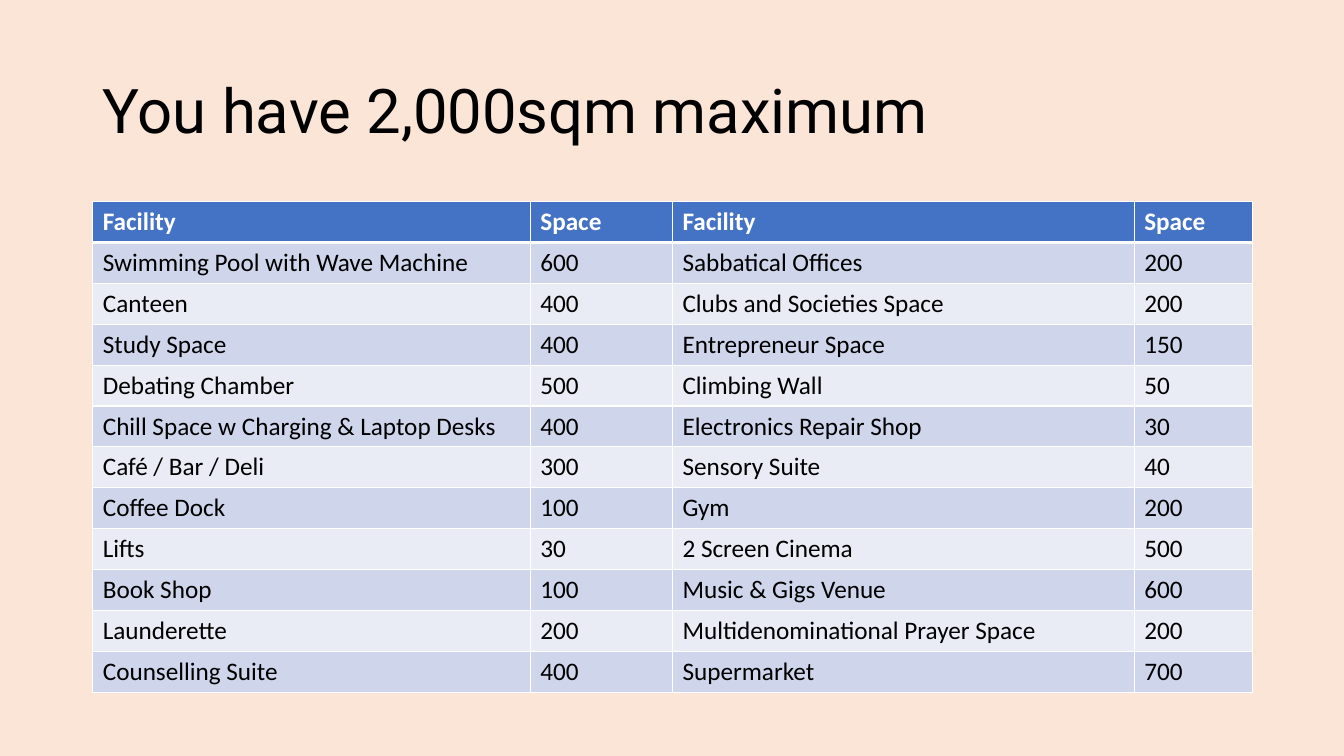
from lxml.etree import SubElement
from pptx import Presentation
from pptx.dml.color import RGBColor
from pptx.enum.text import MSO_ANCHOR
from pptx.oxml.ns import qn
from pptx.util import Inches, Pt

# Content
TITLE = "You have 2,000sqm maximum"
HEAD = ("Facility", "Space", "Facility", "Space")
ROWS = [
    ("Swimming Pool with Wave Machine", 600, "Sabbatical Offices", 200),
    ("Canteen", 400, "Clubs and Societies Space", 200),
    ("Study Space", 400, "Entrepreneur Space", 150),
    ("Debating Chamber", 500, "Climbing Wall", 50),
    ("Chill Space w Charging & Laptop Desks", 400, "Electronics Repair Shop", 30),
    ("Café / Bar / Deli", 300, "Sensory Suite", 40),
    ("Coffee Dock", 100, "Gym", 200),
    ("Lifts", 30, "2 Screen Cinema", 500),
    ("Book Shop", 100, "Music & Gigs Venue", 600),
    ("Launderette", 200, "Multidenominational Prayer Space", 200),
    ("Counselling Suite", 400, "Supermarket", 700),
]

# Colours and sizes
PEACH = RGBColor(0xFB, 0xE5, 0xD6)
BLUE = RGBColor(0x44, 0x72, 0xC4)
DARK = RGBColor(0xCF, 0xD5, 0xEA)
LIGHT = RGBColor(0xE9, 0xEB, 0xF5)
WHITE = RGBColor(0xFF, 0xFF, 0xFF)
BLACK = RGBColor(0, 0, 0)
LEFT, WIDTH = Inches(0.92), Inches(11.5)
COLS = (4.34, 1.41, 4.58, 1.17)


def write(frame, text, size=18, font="Calibri", color=BLACK, bold=False, space=None):
    para = frame.paragraphs[0]
    para.line_spacing = space
    run = para.add_run()
    run.text = text
    run.font.size = Pt(size)
    run.font.name = font
    run.font.color.rgb = color
    run.font.bold = bold


def edge(cell, base):
    props = cell._tc.get_or_add_tcPr()
    for side, width in (("L", 1), ("R", 1), ("T", 1), ("B", base)):
        line = SubElement(props, qn(f"a:ln{side}"), w=str(Pt(width)))
        fill = SubElement(line, qn("a:solidFill"))
        SubElement(fill, qn("a:srgbClr"), val=str(WHITE))


def main():
    deck = Presentation()
    deck.slide_width, deck.slide_height = Inches(13.33), Inches(7.5)
    slide = deck.slides.add_slide(deck.slide_layouts[6])
    slide.background.fill.solid()
    slide.background.fill.fore_color.rgb = PEACH

    # Title
    frame = slide.shapes.add_textbox(LEFT, Inches(0.4), WIDTH, Inches(1.45)).text_frame
    frame.word_wrap = True
    frame.vertical_anchor = MSO_ANCHOR.MIDDLE
    write(frame, TITLE, size=44, font="Roboto", space=0.9)

    # Table of facilities
    lines = [HEAD, *ROWS]
    table = slide.shapes.add_table(
        len(lines), len(COLS), LEFT, Inches(2), WIDTH, Inches(4.87)).table
    for col, width in zip(table.columns, COLS):
        col.width = Inches(width)
    for r, line in enumerate(lines):
        top = r == 0
        for c, value in enumerate(line):
            cell = table.cell(r, c)
            edge(cell, 3 if top else 1)
            cell.fill.solid()
            cell.fill.fore_color.rgb = BLUE if top else DARK if r % 2 else LIGHT
            write(cell.text_frame, str(value), color=WHITE if top else BLACK, bold=top)

    deck.save("out.pptx")


if __name__ == "__main__":
    main()
